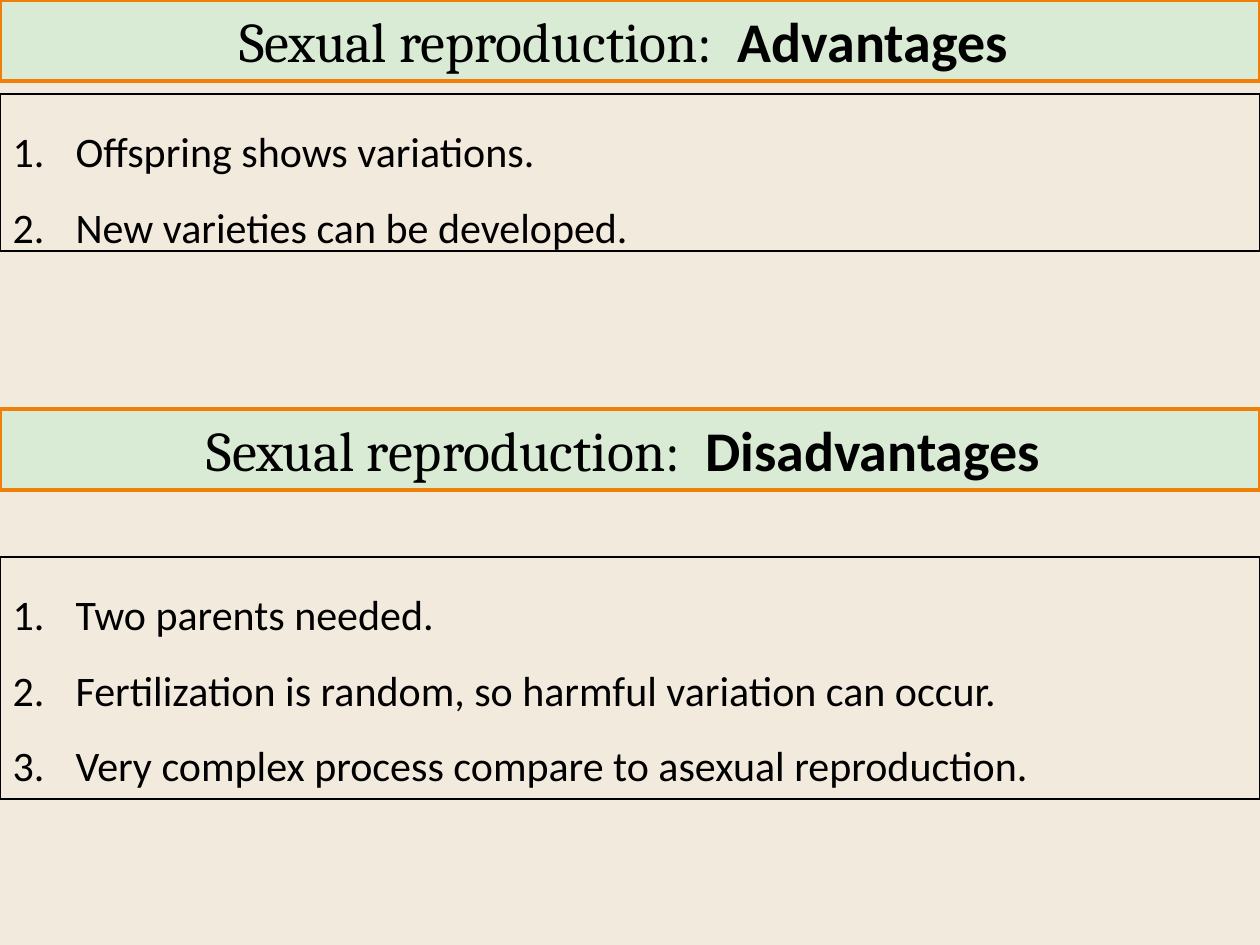
from pptx import Presentation
from pptx.dml.color import RGBColor
from pptx.enum.text import MSO_ANCHOR, MSO_AUTO_SIZE, PP_ALIGN
from pptx.oxml.ns import qn
from pptx.util import Emu, Pt
from lxml.etree import SubElement

# Content: placeholder indexes, tops and heights in px
SECTIONS = [
    {
        "topic": " Advantages ",
        "heading": (0, 0, 81),
        "list": (2, 94, 157),
        "points": ["Offspring shows variations.", "New varieties can be developed. "],
    },
    {
        "topic": " Disadvantages ",
        "heading": (3, 409, 81),
        "list": (4, 557, 242),
        "points": [
            "Two parents needed.",
            "Fertilization is random, so harmful variation can occur.",
            "Very complex process compare to asexual reproduction.",
        ],
    },
]
SUBJECT = "Sexual reproduction: "

PX = 914400 // 126
WIDTH, HEIGHT = 1260, 945
INDENT = 63
CREAM = RGBColor(0xF3, 0xEA, 0xDE)
GREEN = RGBColor(0xD9, 0xEA, 0xD5)
ORANGE = RGBColor(0xF0, 0x7F, 0x09)
BLACK = RGBColor(0, 0, 0)


def px(length):
    return Emu(length * PX)


def place_box(page, place, line_color, line_width):
    index, top, height = place
    box = page.placeholders[index]
    box.left, box.top, box.width, box.height = px(0), px(top), px(WIDTH), px(height)
    box.line.color.rgb = line_color
    box.line.width = Pt(line_width)
    frame = box.text_frame
    frame.word_wrap = True
    frame.auto_size = MSO_AUTO_SIZE.NONE
    frame.vertical_anchor = MSO_ANCHOR.TOP
    return box


def add_heading(page, place, topic):
    box = place_box(page, place, ORANGE, 2)
    box.fill.solid()
    box.fill.fore_color.rgb = GREEN
    para = box.text_frame.paragraphs[0]
    para.alignment = PP_ALIGN.CENTER
    para.space_before = Pt(0)
    for text, font_name, bold in [(SUBJECT, "Cambria", False), (topic, "Calibri", True)]:
        span = para.add_run()
        span.text = text
        span.font.name = font_name
        span.font.size = Pt(32)
        span.font.bold = bold
        span.font.color.rgb = BLACK


def add_numbered_list(page, place, points):
    frame = place_box(page, place, BLACK, 0.75).text_frame
    for number, point in enumerate(points):
        para = frame.add_paragraph() if number else frame.paragraphs[0]
        para.text = point
        para.line_spacing = 1.5
        para.space_before = Pt(0)
        # Automatic numbering with a hanging indent
        properties = para._p.get_or_add_pPr()
        properties.set("marL", str(px(INDENT)))
        properties.set("indent", str(-px(INDENT)))
        SubElement(properties, qn("a:buAutoNum"), type="arabicPeriod")
        para.font.name = "Calibri"
        para.font.size = Pt(24)
        para.font.color.rgb = BLACK


def main():
    deck = Presentation()
    deck.slide_width, deck.slide_height = px(WIDTH), px(HEIGHT)
    page = deck.slides.add_slide(deck.slide_layouts.get_by_name("Comparison"))
    page.background.fill.solid()
    page.background.fill.fore_color.rgb = CREAM

    # Headings with their lists
    for section in SECTIONS:
        add_heading(page, section["heading"], section["topic"])
        add_numbered_list(page, section["list"], section["points"])

    # Unused placeholders
    for box in list(page.placeholders):
        if not box.text_frame.text:
            box.element.getparent().remove(box.element)

    deck.save("out.pptx")


if __name__ == "__main__":
    main()
